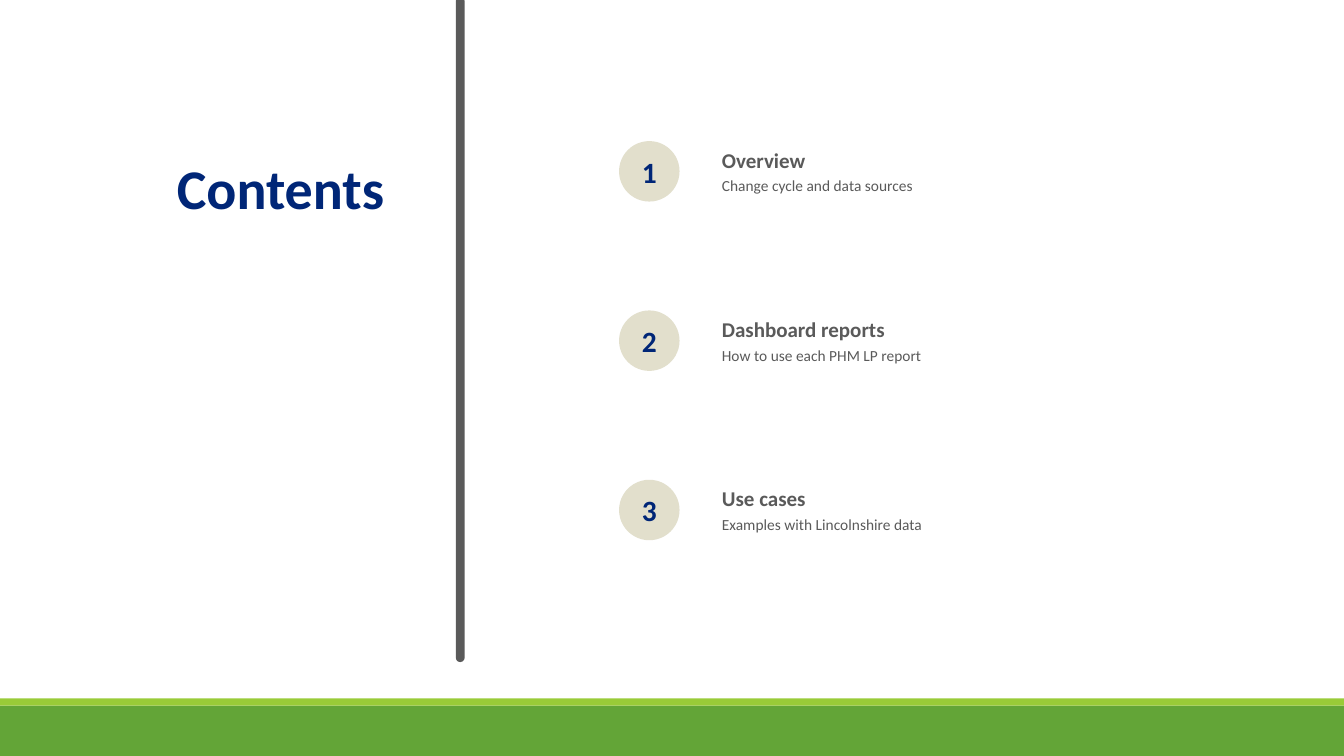
from dataclasses import dataclass

from pptx import Presentation
from pptx import util as u
from pptx.dml.color import RGBColor
from pptx.enum import shapes, text

TITLE = "Contents"
TOPICS = [
    ("Overview", "Change cycle and data sources"),
    ("Dashboard reports", "How to use each PHM LP report"),
    ("Use cases", "Examples with Lincolnshire data"),
]


@dataclass(frozen=True)
class Theme:
    font: str = "Calibri"
    navy: str = "002677"
    gray: str = "5A5A5A"
    sand: str = "E2DFCC"
    green: str = "63A537"
    lime: str = "99CB38"
    title: int = 40
    badge: int = 21
    head: int = 15
    note: int = 11


T = Theme()
WIDE, HIGH = 13.33, 7.5
FOOT, STRIPE = 0.5, 0.07
TOP, STEP = 1.4, 1.68
BADGE_X, BADGE = 6.14, 0.6
TEXT_X, TEXT_W = 7.16, 4.71
KIND = shapes.MSO_SHAPE
ALIGN = text.PP_ALIGN


def place(*box):
    return [u.Inches(n) for n in box]


def draw(home, kind, box, fill):
    """Add a flat preset shape without an outline."""
    shape = home.add_shape(kind, *place(*box))
    shape.shadow.inherit = False
    shape.fill.solid()
    shape.fill.fore_color.rgb = RGBColor.from_string(fill)
    shape.line.fill.background()
    return shape


def write(shape, words, size, color, bold=True, align=ALIGN.LEFT):
    """Fill a shape with one styled line and no margins."""
    frame = shape.text_frame
    frame.word_wrap = True
    frame.margin_left = frame.margin_right = 0
    frame.margin_top = frame.margin_bottom = 0
    line = frame.paragraphs[0]
    line.alignment = align
    run = line.add_run()
    run.text = words
    run.font.name = T.font
    run.font.size = u.Pt(size)
    run.font.bold = bold
    run.font.color.rgb = RGBColor.from_string(color)
    return frame


def label(home, box, *style, **more):
    frame = write(home.add_textbox(*place(*box)), *style, **more)
    frame.auto_size = text.MSO_AUTO_SIZE.SHAPE_TO_FIT_TEXT
    return frame


def topic(slide, index, head, note):
    """Add a numbered badge with its heading and note."""
    top = TOP + index * STEP
    group = slide.shapes.add_group_shape().shapes
    badge = draw(group, KIND.OVAL, (BADGE_X, top, BADGE, BADGE), T.sand)
    frame = write(badge, str(index + 1), T.badge, T.navy, align=ALIGN.CENTER)
    frame.vertical_anchor = text.MSO_ANCHOR.MIDDLE
    label(group, (TEXT_X, top + 0.06, TEXT_W, 0.25), head, T.head, T.gray)
    label(group, (TEXT_X, top + 0.35, TEXT_W, 0.19), note, T.note, T.gray,
          bold=False)


def main():
    deck = Presentation()
    deck.slide_width, deck.slide_height = place(WIDE, HIGH)
    slide = deck.slides.add_slide(deck.slide_layouts[6])

    foot = HIGH - FOOT
    draw(slide.shapes, KIND.RECTANGLE, (0, foot, WIDE, FOOT), T.green)
    draw(slide.shapes, KIND.RECTANGLE, (0, foot - STRIPE, WIDE, STRIPE), T.lime)

    title = label(slide.shapes, (1.18, 1.52, 2.63, 0.67), TITLE, T.title,
                  T.navy, align=ALIGN.RIGHT)
    title.paragraphs[0].space_before = u.Pt(6)

    bar = draw(slide.shapes, KIND.ROUND_2_SAME_RECTANGLE,
               (4.53, 0, 0.07, 6.56), T.gray)
    bar.adjustments[0], bar.adjustments[1] = 0.17, 0.5
    bar.line.color.rgb = RGBColor.from_string(T.gray)
    bar.line.width = u.Pt(1.25)

    for index, (head, note) in enumerate(TOPICS):
        topic(slide, index, head, note)
    deck.save("out.pptx")


if __name__ == "__main__":
    main()
